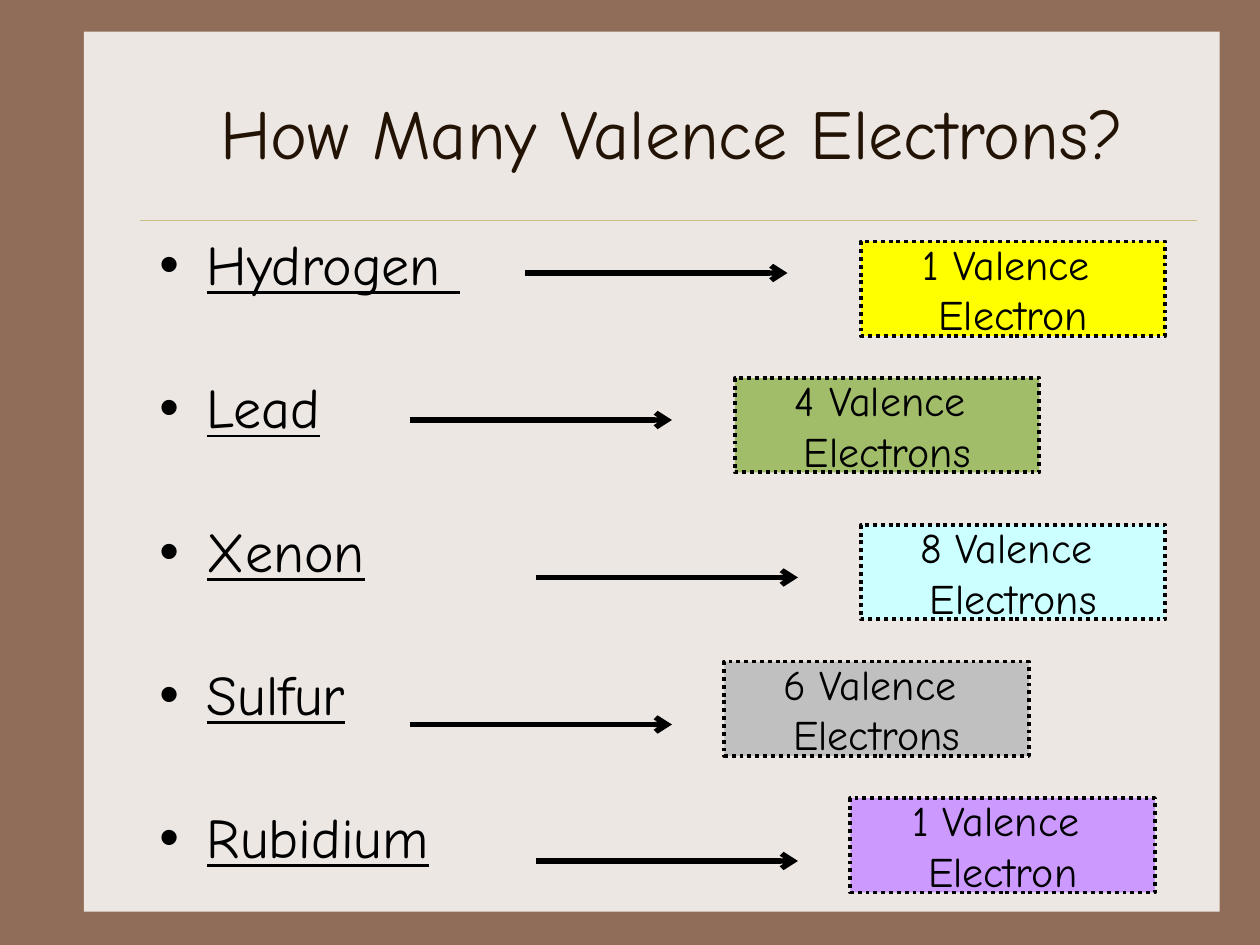
from lxml import etree
from pptx import Presentation
from pptx.dml.color import RGBColor
from pptx.enum.dml import MSO_LINE
from pptx.enum.shapes import MSO_CONNECTOR, MSO_SHAPE
from pptx.enum.text import MSO_ANCHOR, PP_ALIGN
from pptx.oxml.ns import qn
from pptx.util import Pt

FONT = "Comic Neue"
BROWN = RGBColor(0x90, 0x6D, 0x58)
CREAM = RGBColor(0xED, 0xE7, 0xE3)
GOLD = RGBColor(0xCB, 0xBD, 0x83)
DARK = RGBColor(0x22, 0x13, 0x04)
BLACK = RGBColor(0, 0, 0)
YELLOW = RGBColor(0xFF, 0xFF, 0x00)
GREEN = RGBColor(0xA1, 0xBD, 0x69)
CYAN = RGBColor(0xCC, 0xFF, 0xFF)
GREY = RGBColor(0xC0, 0xC0, 0xC0)
PURPLE = RGBColor(0xCC, 0x99, 0xFF)

ELEMENTS = ["Hydrogen ", "Lead", "Xenon", "Sulfur", "Rubidium"]
ARROW_LENGTH = 150
ARROWS = [(300, 156), (234, 240), (306, 330), (234, 414), (306, 492)]
ANSWER_SIZE = (174, 54)
ANSWERS = [
    (492, 138, "1 Valence \nElectron", YELLOW),
    (420, 216, "4 Valence \nElectrons", GREEN),
    (492, 300, "8 Valence \nElectrons", CYAN),
    (414, 378, "6 Valence \nElectrons", GREY),
    (486, 456, "1 Valence \nElectron", PURPLE),
]


def style_text(p, size, color, underline=None):
    for r in p.runs:
        r.font.name = FONT
        r.font.size = Pt(size)
        r.font.color.rgb = color
        r.font.underline = underline


def add_box(slide, x, y, w, h, fill):
    sp = slide.shapes.add_shape(MSO_SHAPE.RECTANGLE, Pt(x), Pt(y), Pt(w), Pt(h))
    sp.shadow.inherit = False
    sp.fill.solid()
    sp.fill.fore_color.rgb = fill
    sp.line.fill.background()
    return sp


def add_line(slide, x, y, length, color, width):
    line = slide.shapes.add_connector(
        MSO_CONNECTOR.STRAIGHT, Pt(x), Pt(y), Pt(x + length), Pt(y))
    line.line.color.rgb = color
    line.line.width = Pt(width)
    etree.SubElement(line.element.spPr, qn("a:effectLst"))
    return line


def add_panel(slide, x, y, w, h):
    slide.background.fill.solid()
    slide.background.fill.fore_color.rgb = BROWN
    add_box(slide, x, y, w, h, CREAM)
    add_line(slide, x + 32, y + 108, w - 45, GOLD, 0.25)


def place_title(slide, x, y, w, h):
    title = slide.shapes.title
    slide.shapes.element.append(title.element)
    title.left, title.top, title.width, title.height = Pt(x), Pt(y), Pt(w), Pt(h)
    tf = title.text_frame
    tf.text = "How Many Valence Electrons?"
    tf.vertical_anchor = MSO_ANCHOR.MIDDLE
    p = tf.paragraphs[0]
    p.alignment = PP_ALIGN.CENTER
    style_text(p, 40, DARK)


def add_element_list(slide, x, y, w, h):
    tf = slide.shapes.add_textbox(Pt(x), Pt(y), Pt(w), Pt(h)).text_frame
    tf.word_wrap = True
    tf.text = "\n".join(ELEMENTS)
    for i, p in enumerate(tf.paragraphs):
        pPr = p._p.get_or_add_pPr()
        pPr.set("marL", str(Pt(27)))
        pPr.set("indent", str(-Pt(27)))
        bullet_font = etree.SubElement(pPr, qn("a:buFont"))
        bullet_font.set("typeface", "Arial")
        etree.SubElement(pPr, qn("a:buChar")).set("char", "•")
        p.line_spacing = 0.9
        p.space_before = Pt(47.3 if i else 0)
        style_text(p, 32, BLACK, True)


def add_arrow(slide, x, y, length):
    arrow = add_line(slide, x, y, length, BLACK, 3)
    ln = arrow.line._get_or_add_ln()
    etree.SubElement(ln, qn("a:tailEnd")).set("type", "arrow")


def add_answer(slide, x, y, w, h, text, fill):
    sp = add_box(slide, x, y, w, h, fill)
    sp.line.color.rgb = BLACK
    sp.line.width = Pt(2.25)
    sp.line.dash_style = MSO_LINE.ROUND_DOT
    tf = sp.text_frame
    tf.word_wrap = False
    tf.vertical_anchor = MSO_ANCHOR.MIDDLE
    tf.text = text
    for p in tf.paragraphs:
        p.alignment = PP_ALIGN.CENTER
        style_text(p, 24, BLACK)


def main():
    prs = Presentation()
    prs.slide_width, prs.slide_height = Pt(720), Pt(540)
    slide = prs.slides.add_slide(prs.slide_layouts[5])
    add_panel(slide, 48, 18, 649, 503)
    place_title(slide, 84, 30, 600, 90)
    add_element_list(slide, 84, 132, 600, 384)
    for x, y in ARROWS:
        add_arrow(slide, x, y, ARROW_LENGTH)
    for x, y, text, fill in ANSWERS:
        add_answer(slide, x, y, *ANSWER_SIZE, text, fill)
    prs.save("out.pptx")


if __name__ == "__main__":
    main()
